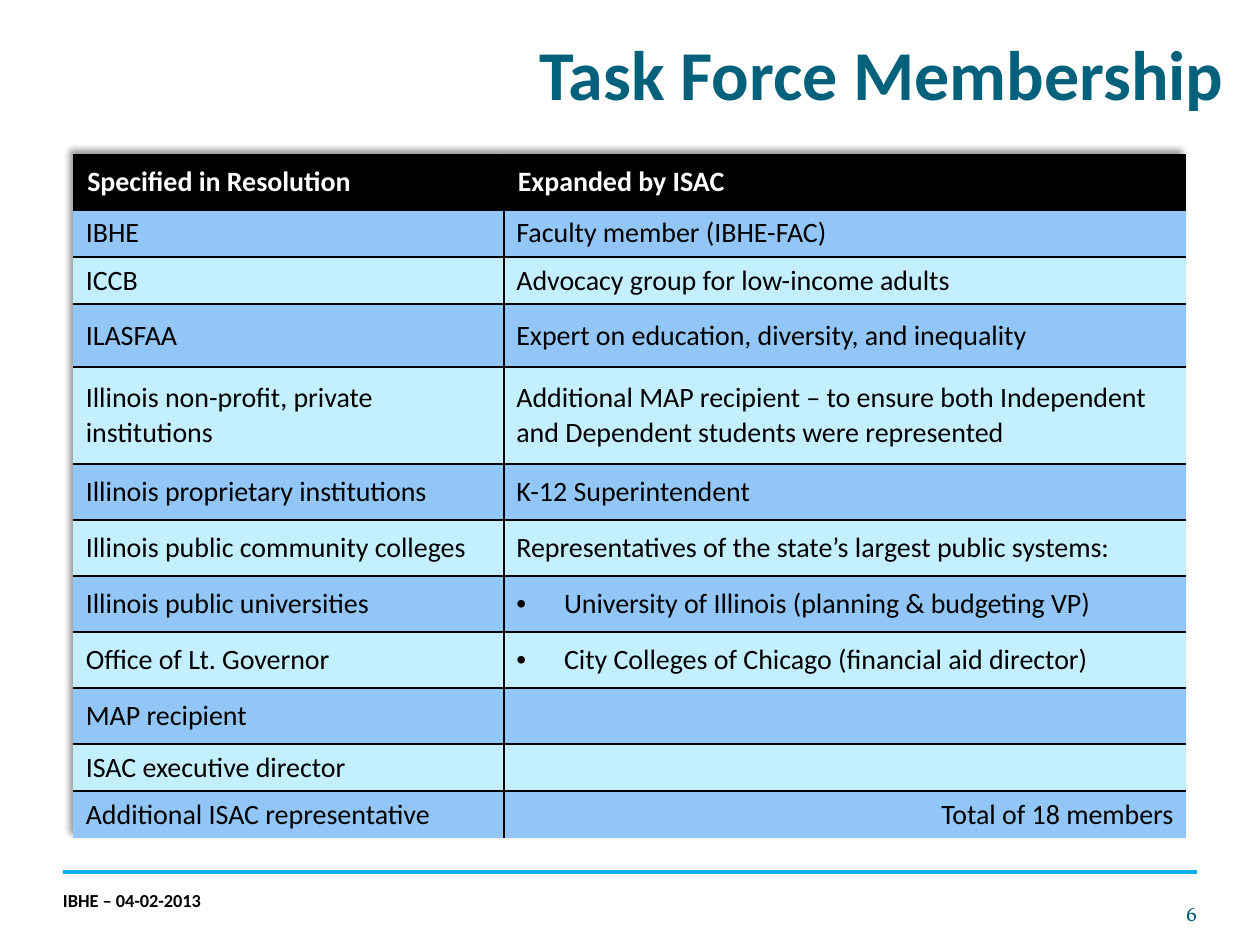
from dataclasses import dataclass

from lxml.etree import SubElement, fromstring
from pptx import Presentation
from pptx.dml.color import RGBColor as Rgb
from pptx.enum.shapes import MSO_CONNECTOR as Link
from pptx.enum.text import MSO_ANCHOR as Anchor, PP_ALIGN as Align
from pptx.oxml.ns import nsdecls, qn
from pptx.util import Cm, Pt


@dataclass(frozen=True)
class Theme:
    sans: str = "Calibri"
    serif: str = "Vollkorn"
    title: str = "04617B"
    page: str = "045D75"
    rule: str = "00B0F0"
    ink: str = "000000"
    white: str = "FFFFFF"
    bands: tuple = ("91C6F7", "C4EFFF")
    big: float = 40
    body: float = 16
    num: float = 12
    small: float = 10.5


@dataclass(frozen=True)
class Style:
    face: str
    size: float
    color: str
    bold: bool = False


@dataclass(frozen=True)
class Label:
    text: str
    box: tuple
    style: Style
    align: Align = Align.LEFT


@dataclass(frozen=True)
class Entry:
    left: str
    right: str = ""
    high: float = 1.13
    bullet: bool = False
    align: Align = Align.LEFT


THEME = Theme()
HEAD = Style(THEME.sans, THEME.body, THEME.white, True)
BODY = Style(THEME.sans, THEME.body, THEME.ink)
LOW = 0.93
NO_STYLE = "{2D5ABB26-0587-4C30-8999-92F81FD0307C}"

LABELS = (
    Label("Task Force Membership", (0.74, 0.48, 23.93, 1.83),
          Style(THEME.sans, THEME.big, THEME.title, True), Align.RIGHT),
    Label("6", (22.02, 17.65, 2.11, 1.02),
          Style(THEME.serif, THEME.num, THEME.page), Align.RIGHT),
    Label("IBHE – 04-02-2013", (1.27, 17.35, 9.32, 1.02),
          Style(THEME.sans, THEME.small, THEME.ink, True)),
)

ROWS = (
    Entry("Specified in Resolution", "Expanded by ISAC"),
    Entry("IBHE", "Faculty member (IBHE-FAC)", LOW),
    Entry("ICCB", "Advocacy group for low-income adults", LOW),
    Entry("ILASFAA", "Expert on education, diversity, and inequality", 1.27),
    Entry("Illinois non-profit, private institutions",
          "Additional MAP recipient – to ensure both Independent "
          "and Dependent students were represented", 1.95),
    Entry("Illinois proprietary institutions", "K-12 Superintendent"),
    Entry("Illinois public community colleges",
          "Representatives of the state’s largest public systems:"),
    Entry("Illinois public universities",
          "University of Illinois (planning & budgeting VP)", bullet=True),
    Entry("Office of Lt. Governor",
          "City Colleges of Chicago (financial aid director)", bullet=True),
    Entry("MAP recipient"),
    Entry("ISAC executive director", high=LOW),
    Entry("Additional ISAC representative", "Total of 18 members", LOW,
          align=Align.RIGHT),
)


def write(para, text: str, style: Style, align: Align) -> None:
    para.alignment = align
    if not text:
        SubElement(para._p, qn("a:endParaRPr"), sz=str(int(style.size * 100)))
        return
    run = para.add_run()
    run.text = text
    font = run.font
    font.name, font.size, font.bold = style.face, Pt(style.size), style.bold
    font.color.rgb = Rgb.from_string(style.color)


def put_label(slide, label: Label) -> None:
    frame = slide.shapes.add_textbox(*map(Cm, label.box)).text_frame
    frame.word_wrap = True
    frame.vertical_anchor = Anchor.BOTTOM
    frame.margin_left = frame.margin_right = 0
    frame.margin_top = frame.margin_bottom = 0
    write(frame.paragraphs[0], label.text, label.style, label.align)


def put_rule(slide) -> None:
    line = slide.shapes.add_connector(
        Link.STRAIGHT, Cm(1.27), Cm(17.58), Cm(24.13), Cm(17.58))
    line.line.color.rgb = Rgb.from_string(THEME.rule)
    line.line.width = Pt(2.25)
    SubElement(line._element.spPr, qn("a:effectLst"))


def add_bullet(para) -> None:
    props = para._p.get_or_add_pPr()
    props.set("marL", str(Cm(0.96)))
    props.set("indent", str(Cm(-0.96)))
    SubElement(props, qn("a:buFont"), typeface="Arial")
    SubElement(props, qn("a:buChar"), char="•")
    tabs = SubElement(props, qn("a:tabLst"))
    SubElement(tabs, qn("a:tab"), pos=str(Cm(1.27)), algn="l")


def add_edges(cell, sides: str) -> None:
    props = cell._tc.get_or_add_tcPr()
    for spot, side in enumerate(sides):
        props.insert(spot, fromstring(
            f'<a:ln{side} {nsdecls("a")} w="{Pt(1)}"><a:solidFill>'
            f'<a:srgbClr val="{THEME.ink}"/></a:solidFill></a:ln{side}>'))


def add_shade(table) -> None:
    props = table._tbl.tblPr
    props.find(qn("a:tableStyleId")).text = NO_STYLE
    props.insert(0, fromstring(
        f'<a:effectLst {nsdecls("a")}><a:outerShdw blurRad="{Pt(4)}" '
        f'dist="{Pt(3)}" dir="13500000" algn="br" rotWithShape="0">'
        f'<a:srgbClr val="{THEME.ink}"><a:alpha val="40000"/></a:srgbClr>'
        '</a:outerShdw></a:effectLst>'))


def put_table(slide) -> None:
    wide = (8.68, 13.75)
    high = sum(row.high for row in ROWS)
    table = slide.shapes.add_table(
        len(ROWS), 2, Cm(1.48), Cm(3.1), Cm(sum(wide)), Cm(high)).table
    add_shade(table)
    for col, width in zip(table.columns, wide):
        col.width = Cm(width)
    for i, row in enumerate(ROWS):
        table.rows[i].height = Cm(row.high)
        tint = THEME.bands[(i - 1) % 2] if i else THEME.ink
        for j, text in enumerate((row.left, row.right)):
            cell = table.cell(i, j)
            cell.fill.solid()
            cell.fill.fore_color.rgb = Rgb.from_string(tint)
            cell.vertical_anchor = Anchor.MIDDLE
            cell.margin_left = cell.margin_right = Cm(0.25 if i else 0.28)
            cell.margin_top = cell.margin_bottom = Cm(0.13 if i else 0.15)
            para = cell.text_frame.paragraphs[0]
            if j and row.bullet:
                add_bullet(para)
            write(para, text, BODY if i else HEAD,
                  row.align if j else Align.LEFT)
            sides = ("L" if j else "R") + ("T" if i else "")
            add_edges(cell, sides + ("B" if i < len(ROWS) - 1 else ""))


def main() -> None:
    deck = Presentation()
    deck.slide_width, deck.slide_height = Cm(25.4), Cm(19.05)
    slide = deck.slides.add_slide(deck.slide_layouts[6])
    put_rule(slide)
    put_table(slide)
    for label in LABELS:
        put_label(slide, label)
    deck.save("out.pptx")


if __name__ == "__main__":
    main()
